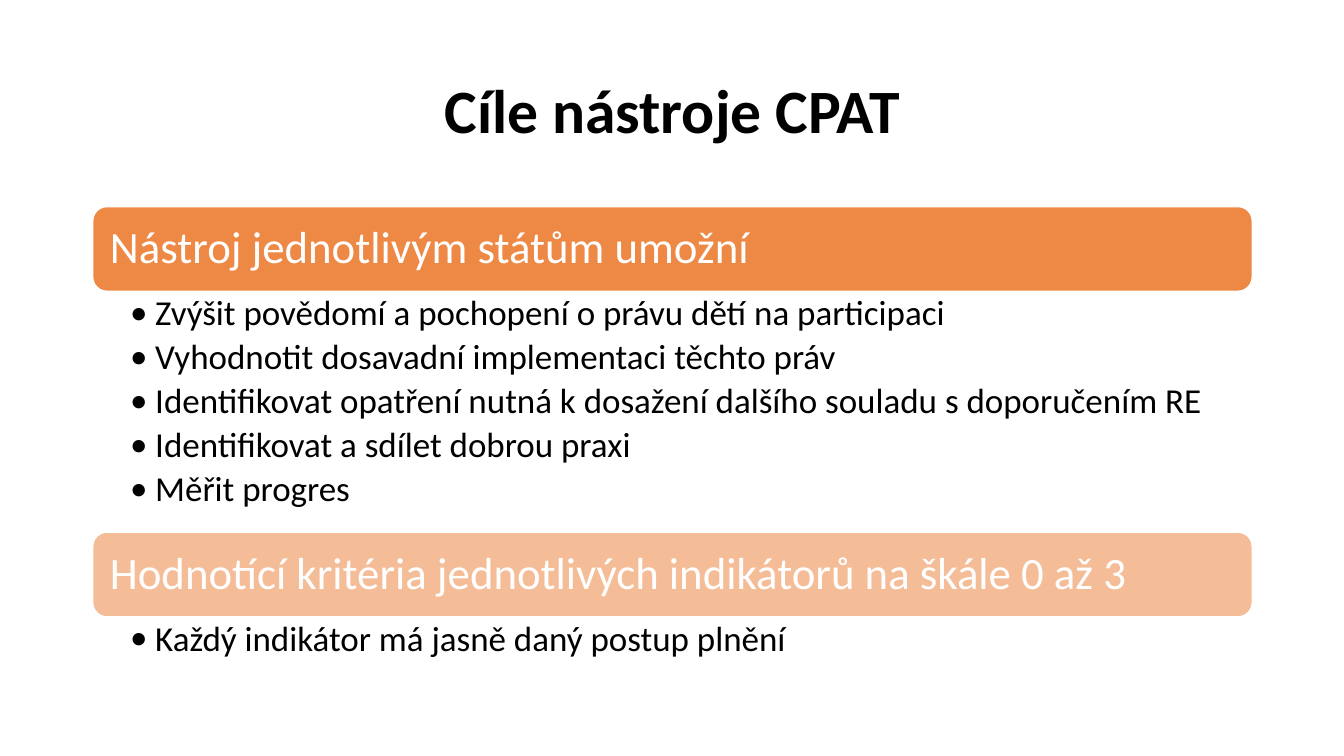
from lxml import etree
from pptx import Presentation
from pptx.dml.color import RGBColor
from pptx.enum.shapes import MSO_SHAPE
from pptx.enum.text import MSO_ANCHOR, PP_ALIGN
from pptx.oxml.ns import qn
from pptx.util import Inches, Pt

ROUND = MSO_SHAPE.ROUNDED_RECTANGLE
MIDDLE, TOP = MSO_ANCHOR.MIDDLE, MSO_ANCHOR.TOP
LEFT, CENTER = PP_ALIGN.LEFT, PP_ALIGN.CENTER
ORANGE, WHITE, BLACK = "ED7D31", "FFFFFF", "000000"
EDGE, WIDTH, BAR = 0.92, 11.5, 0.84

TITLE = "Cíle nástroje CPAT"
# top, height of list, opacity of bar, heading, points
GROUPS = [
    (2.05, 2.39, 90, "Nástroj jednotlivým státům umožní", [
        "Zvýšit povědomí a pochopení o právu dětí na participaci",
        "Vyhodnotit dosavadní implementaci těchto práv",
        "Identifikovat opatření nutná k dosažení dalšího souladu s doporučením RE",
        "Identifikovat a sdílet dobrou praxi",
        "Měřit progres",
    ]),
    (5.28, 0.58, 50, "Hodnotící kritéria jednotlivých indikátorů na škále 0 až 3", [
        "Každý indikátor má jasně daný postup plnění",
    ]),
]


def paint(color, value):
    color.rgb = RGBColor.from_string(value)


def add_bullet(para):
    props = para._p.get_or_add_pPr()
    props.set("marL", str(Inches(0.25)))
    props.set("indent", str(-Inches(0.25)))
    etree.SubElement(props, qn("a:buFont")).set("typeface", "Calibri")
    etree.SubElement(props, qn("a:buChar")).set("char", "•")


def write(shape, lines, size, color=BLACK, bold=False, align=LEFT,
          anchor=MIDDLE, inset=(0.1, 0.05, 0.1, 0.05), after=0, bullet=False):
    """Fill a shape with paragraphs; inset runs left, top, right, bottom."""
    frame = shape.text_frame
    frame.word_wrap = True
    frame.vertical_anchor = anchor
    (frame.margin_left, frame.margin_top,
     frame.margin_right, frame.margin_bottom) = map(Inches, inset)
    frame.text = "\n".join(lines)
    for para in frame.paragraphs:
        para.alignment = align
        para.line_spacing = 0.9
        para.space_before = Pt(0)
        para.space_after = Pt(after)
        if bullet:
            add_bullet(para)
        font = para.runs[0].font
        font.name, font.size, font.bold = "Calibri", Pt(size), bold
        paint(font.color, color)


def add_title(slide, left, top, width, height):
    title = slide.shapes.title
    title.left, title.top = Inches(left), Inches(top)
    title.width, title.height = Inches(width), Inches(height)
    write(title, [TITLE], 44, bold=True, align=CENTER)


def add_bar(slide, left, top, width, text, alpha):
    bar = slide.shapes.add_shape(
        ROUND, Inches(left), Inches(top), Inches(width), Inches(BAR))
    bar.shadow.inherit = False
    bar.fill.solid()
    paint(bar.fill.fore_color, ORANGE)
    tint = bar._element.spPr.find(qn("a:solidFill"))[0]
    etree.SubElement(tint, qn("a:alpha")).set("val", str(alpha * 1000))
    paint(bar.line.color, WHITE)
    bar.line.width = Pt(1)
    write(bar, [text], 32, color=WHITE, inset=(0.13,) * 4)


def add_group(slide, left, top, width, depth, alpha, head, points):
    """Place a heading bar with its bulleted list right below."""
    add_bar(slide, left, top, width, head, alpha)
    box = slide.shapes.add_textbox(
        Inches(left), Inches(top + BAR), Inches(width), Inches(depth))
    write(box, points, 25, anchor=TOP, inset=(0.37, 0.04, 0.25, 0.04),
          after=4.5, bullet=True)


def main():
    deck = Presentation()
    deck.slide_width, deck.slide_height = Inches(13.33), Inches(7.5)
    slide = deck.slides.add_slide(deck.slide_layouts[5])
    add_title(slide, EDGE, 0.4, WIDTH, 1.45)
    for top, depth, alpha, head, points in GROUPS:
        add_group(slide, EDGE, top, WIDTH, depth, alpha, head, points)
    deck.save("out.pptx")


if __name__ == "__main__":
    main()
